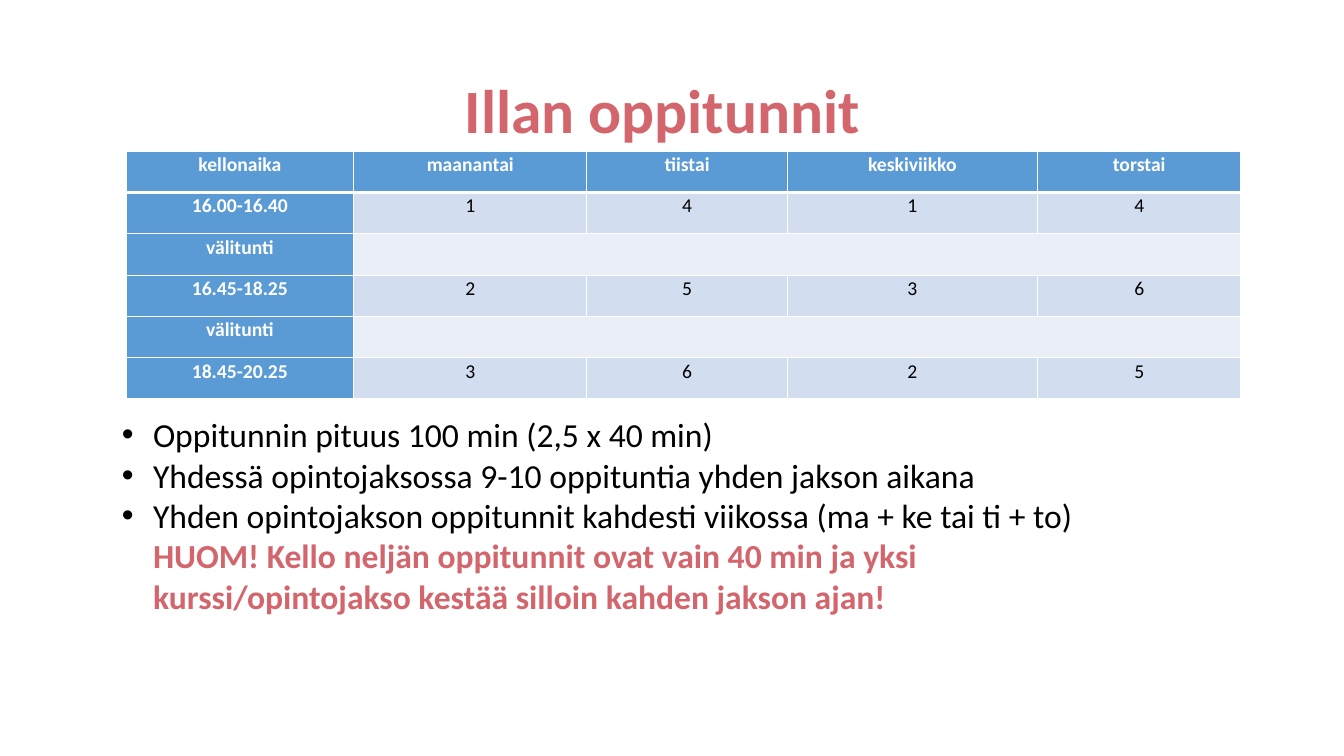
from lxml.etree import SubElement
from pptx import Presentation
from pptx.dml.color import RGBColor
from pptx.enum.text import MSO_ANCHOR, PP_ALIGN
from pptx.oxml.ns import qn
from pptx.util import Inches, Pt

# Content
TITLE = "Illan oppitunnit"
TIMETABLE = [
    ("kellonaika", "maanantai", "tiistai", "keskiviikko", "torstai"),
    ("16.00-16.40", "1", "4", "1", "4"),
    ("välitunti",),
    ("16.45-18.25", "2", "5", "3", "6"),
    ("välitunti",),
    ("18.45-20.25", "3", "6", "2", "5"),
]
BULLETS = [
    "Oppitunnin pituus 100 min (2,5 x 40 min)",
    "Yhdessä opintojaksossa 9-10 oppituntia yhden jakson aikana",
    "Yhden opintojakson oppitunnit kahdesti viikossa (ma + ke tai ti + to)",
]
NOTICE = [
    "HUOM! Kello neljän oppitunnit ovat vain 40 min ja yksi",
    "kurssi/opintojakso kestää silloin kahden jakson ajan!",
]

# Look
FONT = "Calibri"
ROSE, BLACK, WHITE = "D3656D", "000000", "FFFFFF"
HEADER_BLUE, LESSON_BLUE, BREAK_BLUE = "5B9BD5", "D2DEEF", "EAEFF7"
COLUMN_WIDTHS = (2.26, 2.31, 1.99, 2.48, 2.02)
ROW_HEIGHT = 0.41
TITLE_INDENT, LIST_INDENT = 3.59, 0.31


def color(value):
    return RGBColor.from_string(value)


def style(para, size, shade, bold=False):
    para.font.name = FONT
    para.font.size = Pt(size)
    para.font.color.rgb = color(shade)
    para.font.bold = bold


def indent(para, left, first=0):
    properties = para._p.get_or_add_pPr()
    properties.set("marL", str(Inches(left)))
    properties.set("indent", str(Inches(first)))
    return properties


def add_border(cell, side, width):
    line = SubElement(cell._tc.get_or_add_tcPr(), qn("a:" + side), w=str(Pt(width)))
    fill = SubElement(line, qn("a:solidFill"))
    SubElement(fill, qn("a:srgbClr"), val=WHITE)


deck = Presentation()
deck.slide_width, deck.slide_height = Inches(13.33), Inches(7.5)
page = deck.slides.add_slide(deck.slide_layouts[5])

# Title
title = page.shapes.title
title.left, title.top = Inches(0.92), Inches(0.4)
title.width, title.height = Inches(11.5), Inches(1.45)
title.text_frame.text = TITLE
title.text_frame.vertical_anchor = MSO_ANCHOR.MIDDLE
para = title.text_frame.paragraphs[0]
indent(para, TITLE_INDENT)
para.alignment = PP_ALIGN.LEFT
para.line_spacing = 0.9
style(para, 44, ROSE, bold=True)

# Lesson rules and notice
box = page.shapes.add_textbox(Inches(1.11), Inches(4.06), Inches(10.34), Inches(2.12))
frame = box.text_frame
frame.word_wrap = True
for index, text in enumerate(BULLETS + NOTICE):
    para = frame.add_paragraph() if index else frame.paragraphs[0]
    para.text = text
    is_bullet = index < len(BULLETS)
    properties = indent(para, LIST_INDENT, -LIST_INDENT if is_bullet else 0)
    if is_bullet:
        SubElement(properties, qn("a:buFont"), typeface="Arial")
        SubElement(properties, qn("a:buChar"), char="•")
    style(para, 24, BLACK if is_bullet else ROSE, bold=not is_bullet)

# Timetable
row_count, column_count = len(TIMETABLE), len(COLUMN_WIDTHS)
table = page.shapes.add_table(
    row_count, column_count, Inches(1.25), Inches(1.5),
    Inches(sum(COLUMN_WIDTHS)), Inches(ROW_HEIGHT * row_count)).table
for column, width in zip(table.columns, COLUMN_WIDTHS):
    column.width = Inches(width)

for r, lessons in enumerate(TIMETABLE):
    table.rows[r].height = Inches(ROW_HEIGHT)
    is_break = len(lessons) == 1
    if is_break:
        table.cell(r, 1).merge(table.cell(r, column_count - 1))
    for c in range(column_count):
        cell = table.cell(r, c)
        cell.margin_left = cell.margin_right = cell.margin_top = cell.margin_bottom = 0
        is_header = r == 0 or c == 0
        for side in ("lnL", "lnR", "lnT", "lnB"):
            under_header = (r, side) in ((0, "lnB"), (1, "lnT"))
            add_border(cell, side, 3 if under_header else 1)
        cell.fill.solid()
        body_fill = BREAK_BLUE if is_break else LESSON_BLUE
        cell.fill.fore_color.rgb = color(HEADER_BLUE if is_header else body_fill)
        if c < len(lessons):
            cell.text = lessons[c]
            para = cell.text_frame.paragraphs[0]
            para.alignment = PP_ALIGN.CENTER
            para.line_spacing = 1.07
            para.space_after = Pt(8)
            style(para, 14, WHITE if is_header else BLACK, bold=is_header)

deck.save("out.pptx")
